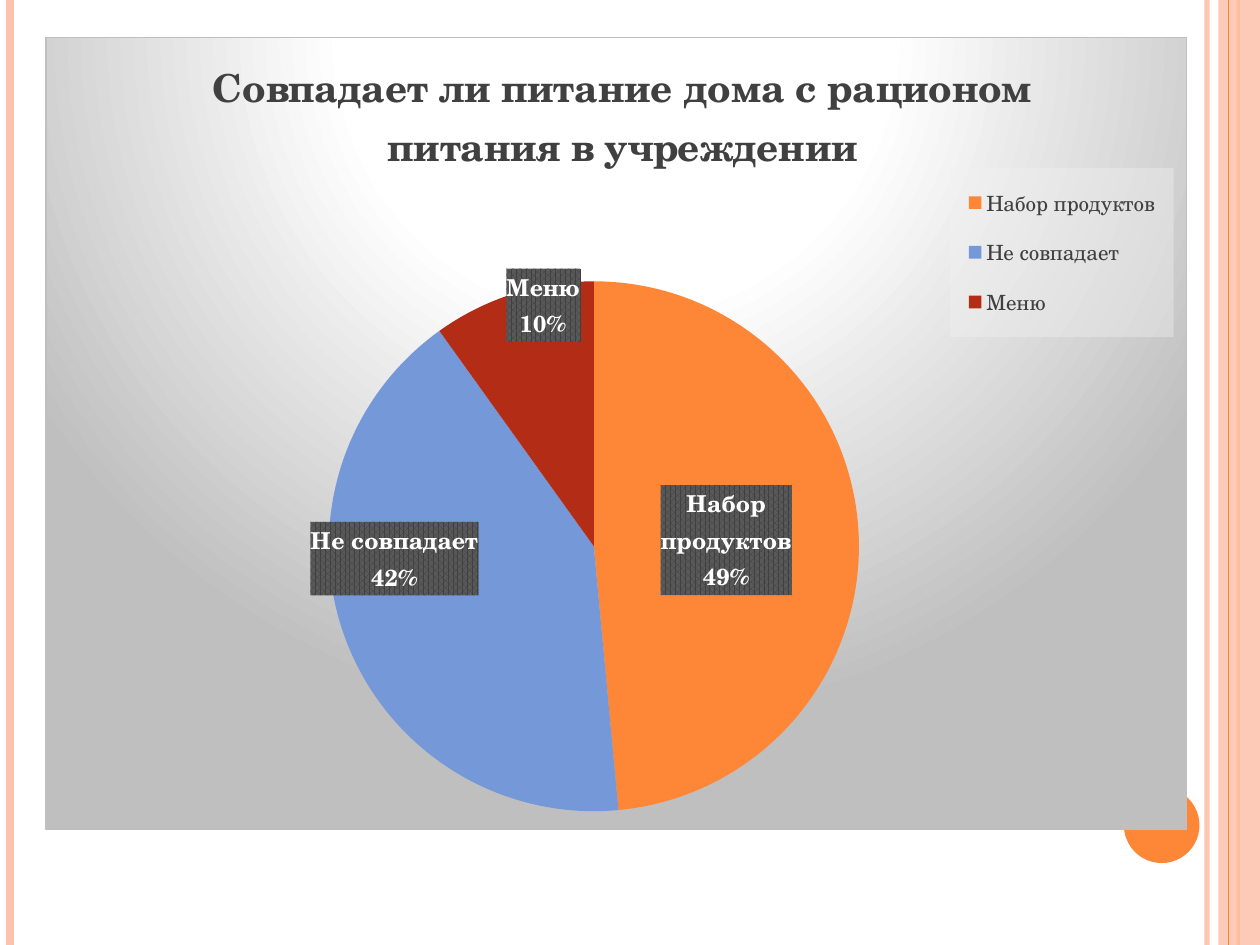
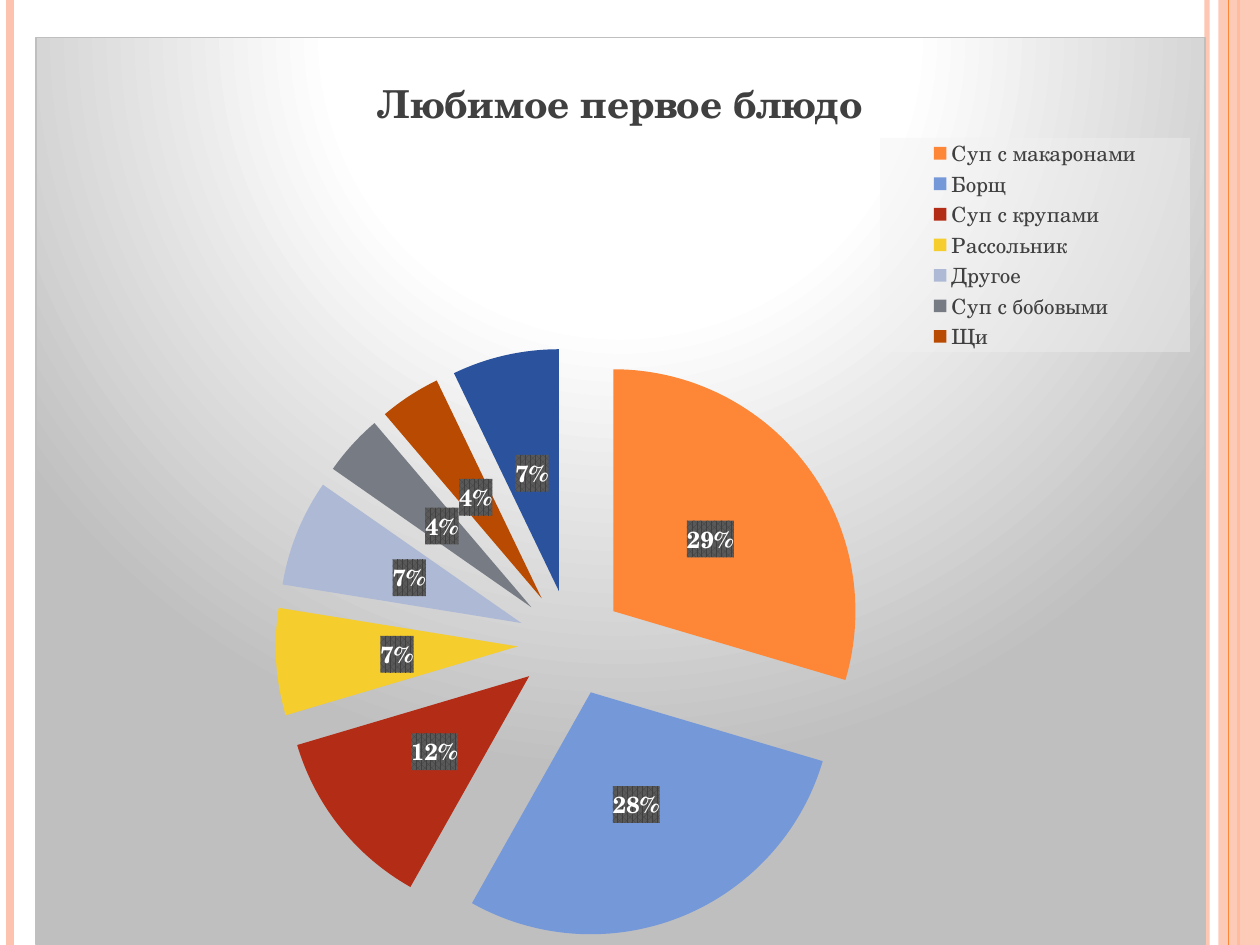
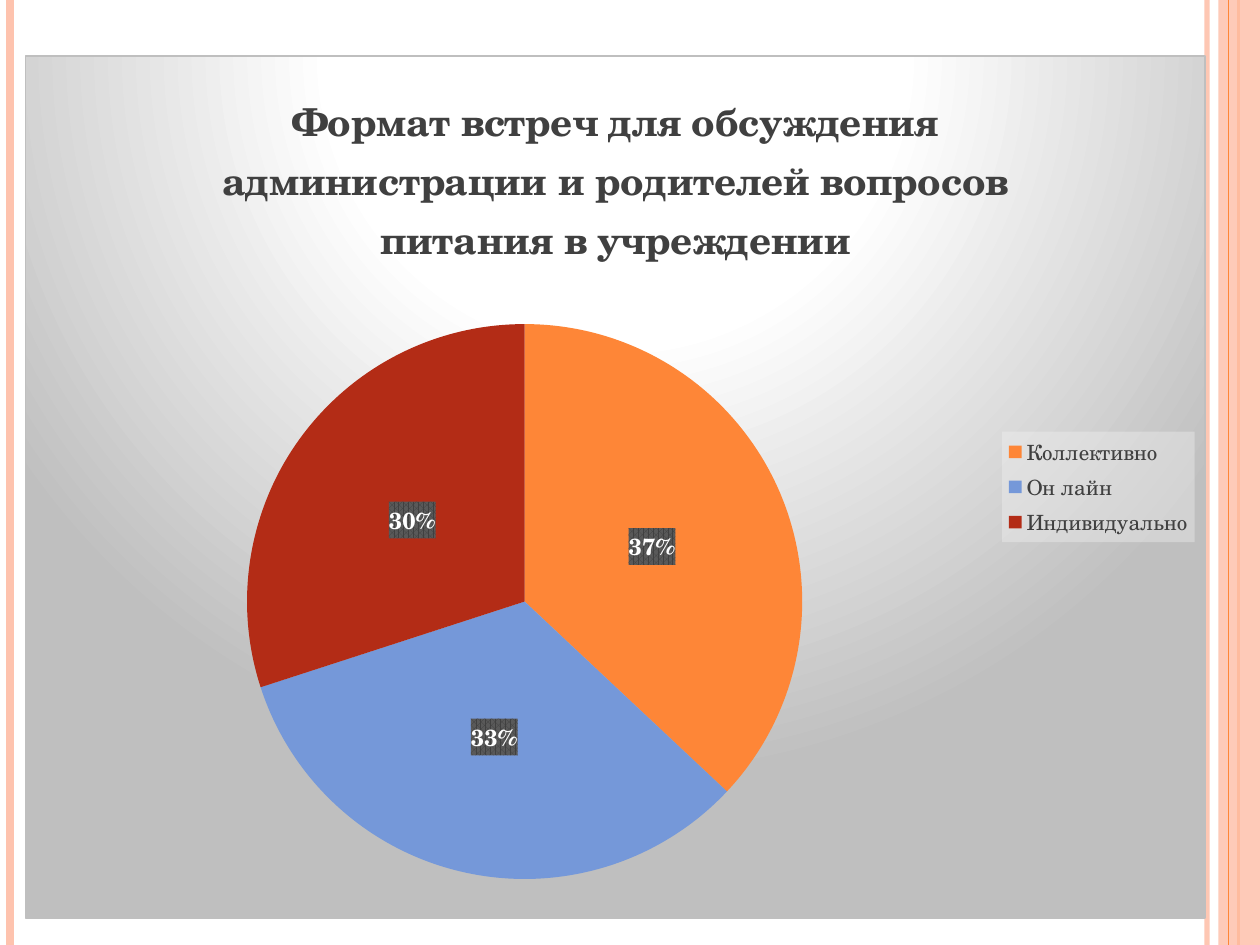
from copy import deepcopy

from lxml import etree
from pptx import Presentation
from pptx.chart.data import CategoryChartData
from pptx.dml.color import RGBColor
from pptx.enum.chart import XL_CHART_TYPE, XL_LABEL_POSITION, XL_LEGEND_POSITION
from pptx.enum.shapes import MSO_CONNECTOR, MSO_SHAPE
from pptx.oxml import parse_xml
from pptx.oxml.ns import qn
from pptx.util import Inches, Pt

PIE = XL_CHART_TYPE.PIE
CENTER = XL_LABEL_POSITION.CENTER
RIGHT = XL_LEGEND_POSITION.RIGHT
STRAIGHT = MSO_CONNECTOR.STRAIGHT
RECTANGLE = MSO_SHAPE.RECTANGLE
OVAL = MSO_SHAPE.OVAL

NAMESPACES = (
    'xmlns:a="http://schemas.openxmlformats.org/drawingml/2006/main" '
    'xmlns:c="http://schemas.openxmlformats.org/drawingml/2006/chart"'
)
ORANGE = "FE8637"
PEACH = "FEC3AE"
DARK_GREY = "404040"
WHITE = "FFFFFF"
SLICE_COLORS = [ORANGE, "7598D9", "B32C16", "F5CD2D",
                "AEBAD5", "777C84", "B84A01", "2B539D"]

CHART_BACKGROUND = f"""<c:spPr {NAMESPACES}>
<a:gradFill><a:gsLst>
<a:gs pos="0"><a:srgbClr val="FFFFFF"/></a:gs>
<a:gs pos="39000"><a:srgbClr val="FFFFFF"/></a:gs>
<a:gs pos="100000"><a:srgbClr val="BFBFBF"/></a:gs>
</a:gsLst><a:path path="circle">
<a:fillToRect l="50000" t="-80000" r="50000" b="180000"/></a:path></a:gradFill>
<a:ln w="9525"><a:solidFill><a:srgbClr val="BFBFBF"/></a:solidFill></a:ln>
</c:spPr>"""
LEGEND_BACKGROUND = f"""<c:spPr {NAMESPACES}>
<a:solidFill><a:srgbClr val="F2F2F2"><a:alpha val="39000"/></a:srgbClr></a:solidFill>
</c:spPr>"""
LABEL_BACKGROUND = f"""<c:spPr {NAMESPACES}>
<a:pattFill prst="pct75"><a:fgClr><a:srgbClr val="404040"/></a:fgClr>
<a:bgClr><a:srgbClr val="595959"/></a:bgClr></a:pattFill>
</c:spPr>"""


def color(value):
    return RGBColor.from_string(value)


def set_alpha(element, percent):
    """Make the solid colour inside element partly transparent."""
    rgb = next(element.iter(qn("a:srgbClr")))
    etree.SubElement(rgb, qn("a:alpha")).set("val", str(percent * 1000))


def chart_element(tag, value):
    return parse_xml(f'<c:{tag} {NAMESPACES} val="{value}"/>')


def manual_layout(percents, from_edge=True, inner=False):
    """Place a chart part by x, y and perhaps width, height in percent of the chart."""
    target = '<c:layoutTarget val="inner"/>' if inner else ""
    modes = '<c:xMode val="edge"/><c:yMode val="edge"/>' if from_edge else ""
    places = "".join(f'<c:{name} val="{percent / 100:.3f}"/>'
                     for name, percent in zip("xywh", percents))
    return parse_xml(f"<c:layout {NAMESPACES}><c:manualLayout>{target}{modes}{places}"
                     "</c:manualLayout></c:layout>")


def replace_layout(parent, layout, following):
    """Put layout into parent, just before the element that must follow it."""
    for old_layout in parent.findall(qn("c:layout")):
        parent.remove(old_layout)
    following.addprevious(layout)


class Deck:
    font_name = "TeX Gyre Schola"

    def __init__(self):
        self.presentation = Presentation()
        self.presentation.slide_width = Inches(10)
        self.presentation.slide_height = Inches(7.5)
        self.layout = self.presentation.slide_layouts[6]
        self.slide = None

    def new_slide(self):
        self.slide = self.presentation.slides.add_slide(self.layout)

    def style_font(self, font, size, font_color, bold=False):
        font.name = self.font_name
        font.size = Pt(size)
        font.bold = bold
        font.color.rgb = color(font_color)

    def vertical_line(self, left, line_color, width, alpha=100):
        line = self.slide.shapes.add_connector(
            STRAIGHT, Inches(left), 0, Inches(left), self.presentation.slide_height)
        line.line.color.rgb = color(line_color)
        line.line.width = Pt(width)
        properties = line._element.spPr
        if alpha < 100:
            set_alpha(properties, alpha)
        etree.SubElement(properties, qn("a:effectLst"))

    def filled_shape(self, kind, box, fill, alpha=100):
        shape = self.slide.shapes.add_shape(kind, *map(Inches, box))
        shape.shadow.inherit = False
        shape.fill.solid()
        shape.fill.fore_color.rgb = color(fill)
        shape.line.fill.background()
        if alpha < 100:
            set_alpha(shape._element.spPr, alpha)

    def draw_frame(self):
        """Draw the side bands and move them to the shared layout."""
        self.vertical_line(9.58, PEACH, 3, alpha=93)
        self.vertical_line(0.08, PEACH, 4.5)
        self.vertical_line(9.83, ORANGE, 1.5)
        self.filled_shape(RECTANGLE, (9.67, 0, 0.33, 7.5), PEACH, alpha=87)
        self.vertical_line(9.75, ORANGE, 0.75)
        self.filled_shape(OVAL, (8.92, 6.25, 0.6, 0.6), ORANGE)
        for shape in list(self.slide.shapes):
            self.layout.shapes._spTree.append(shape._element)

    def pie(self, box, title, slices, plot_box, series_name=None, title_place=None,
            legend_box=None, hidden_entry=None, explosion=0, show_names=False,
            label_offsets=None):
        data = CategoryChartData()
        data.categories = [name for name, value in slices]
        values = [value for name, value in slices]
        data.add_series(series_name or title, values)
        chart = self.slide.shapes.add_chart(PIE, *map(Inches, box), data).chart
        self.style_font(chart.font, 10, "000000")
        chart._chartSpace.find(qn("c:chart")).addnext(parse_xml(CHART_BACKGROUND))
        self.style_title(chart, title, title_place)

        plot_area = chart._chartSpace.chart.plotArea
        replace_layout(plot_area, manual_layout(plot_box, inner=True),
                       plot_area.find(qn("c:pieChart")))

        chart.plots[0].vary_by_categories = True
        series = chart.plots[0].series[0]
        if explosion:
            series._element.find(qn("c:tx")).addnext(chart_element("explosion", explosion))
        for index, slice_color in enumerate(SLICE_COLORS[:len(slices)]):
            fill = series.points[index].format.fill
            fill.solid()
            fill.fore_color.rgb = color(slice_color)

        self.style_legend(chart, legend_box, hidden_entry)
        total = sum(values)
        as_share = all(round(100 * value / total) == value for value in values)
        self.style_labels(series, as_share, show_names, label_offsets or {})

    def style_title(self, chart, text, place):
        chart.has_title = True
        title = chart.chart_title
        paragraph = title.text_frame.paragraphs[0]
        paragraph.text = text
        self.style_font(paragraph.font, 22, DARK_GREY, bold=True)
        if place:
            element = title._element
            replace_layout(element, manual_layout(place), element.find(qn("c:overlay")))

    def style_legend(self, chart, box, hidden_entry):
        chart.has_legend = True
        legend = chart.legend
        legend.position = RIGHT
        legend.include_in_layout = False
        self.style_font(legend.font, 12, DARK_GREY)
        overlay = legend._element.find(qn("c:overlay"))
        if hidden_entry is not None:
            overlay.addprevious(parse_xml(
                f'<c:legendEntry {NAMESPACES}><c:idx val="{hidden_entry}"/>'
                '<c:delete val="1"/></c:legendEntry>'))
        if box:
            replace_layout(legend._element, manual_layout(box), overlay)
        overlay.addnext(parse_xml(LEGEND_BACKGROUND))

    def style_labels(self, series, as_share, show_names, offsets):
        """Label slices with their share, or with the value where the share rounds differently."""
        labels = series.data_labels
        labels.show_percentage = as_share
        labels.show_value = not as_share
        labels.show_category_name = show_names
        labels.number_format = "0%" if as_share else '0"%"'
        labels.number_format_is_linked = False
        labels.position = CENTER
        self.style_font(labels.font, 13.3, WHITE, bold=True)
        element = labels._element
        element.find(qn("c:numFmt")).addnext(parse_xml(LABEL_BACKGROUND))
        if show_names:
            separator = parse_xml(f"<c:separator {NAMESPACES}>\n</c:separator>")
            element.find(qn("c:showBubbleSize")).addnext(separator)
        shared = [child for child in element if child.tag != qn("c:showLeaderLines")]
        for position, (index, offset) in enumerate(sorted(offsets.items())):
            label = parse_xml(f'<c:dLbl {NAMESPACES}><c:idx val="{index}"/></c:dLbl>')
            label.append(manual_layout(offset, from_edge=False))
            label.extend(deepcopy(shared))
            element.insert(position, label)


def main():
    deck = Deck()

    deck.new_slide()
    deck.draw_frame()
    deck.pie(
        (0.36, 0.29, 9.06, 6.3),
        "Совпадает ли питание дома с рационом питания в учреждении",
        [("Набор продуктов", 49), ("Не совпадает", 42), ("Меню", 10)],
        plot_box=(24.8, 30.8, 46.5, 66.9),
        series_name="Series 1",
        title_place=(14, 1.2),
        legend_box=(79.3, 16.5, 19.6, 21.3),
        show_names=True,
        label_offsets={1: (-6.6, -4.3), 2: (-0.9, -14.5)},
    )

    deck.new_slide()
    deck.pie(
        (0.28, 0.29, 9.29, 7.21),
        "Любимое первое блюдо",
        [("Суп с макаронами", 29), ("Борщ", 28), ("Суп с крупами", 12),
         ("Рассольник", 7), ("Другое", 7), ("Суп с бобовыми", 4),
         ("Щи", 4), ("Другое", 7)],
        plot_box=(20.5, 33.6, 50.5, 66.4),
        legend_box=(72.2, 11.1, 26.5, 23.6),
        hidden_entry=7,
        explosion=22,
    )

    deck.new_slide()
    deck.pie(
        (0.2, 0.44, 9.37, 6.85),
        "Формат встреч для обсуждения администрации и родителей "
        "вопросов питания в учреждении",
        [("Коллективно", 37), ("Он лайн", 33), ("Индивидуально", 30)],
        plot_box=(2.3, 31.1, 80, 64.4),
    )

    deck.presentation.save("out.pptx")


if __name__ == "__main__":
    main()
